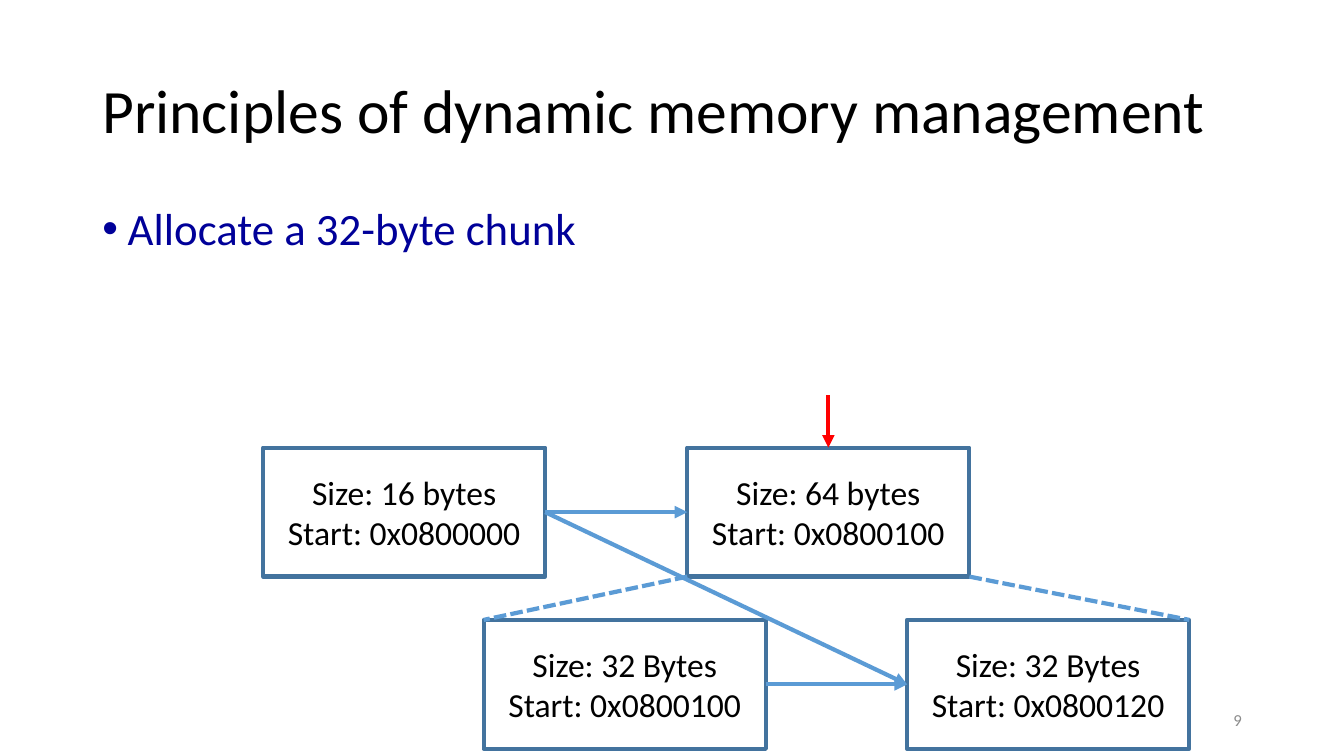
from lxml.etree import SubElement
from pptx import Presentation
from pptx.dml.color import RGBColor
from pptx.enum.dml import MSO_LINE_DASH_STYLE as Dash
from pptx.enum.shapes import MSO_CONNECTOR as Connector, MSO_SHAPE as Preset
from pptx.enum.text import MSO_ANCHOR as Anchor, PP_ALIGN as Align
from pptx.oxml.ns import qn
from pptx.util import Cm, Pt

BLACK = RGBColor(0x00, 0x00, 0x00)
NAVY = RGBColor(0x00, 0x00, 0x99)
GRAY = RGBColor(0x8C, 0x8C, 0x8C)
OUTLINE = RGBColor(0x43, 0x73, 0x9E)
BLUE = RGBColor(0x5B, 0x9B, 0xD5)
RED = RGBColor(0xFF, 0x00, 0x00)

TOP, LEFT, RIGHT = 0, 1, 3
CHUNK_WIDTH, CHUNK_HEIGHT = Cm(7.11), Cm(3.25)
UPPER_ROW, LOWER_ROW = Cm(11.28), Cm(15.62)


class MemorySlide:
    font = "Calibri"
    line_width = Pt(3)

    def __init__(self, slide):
        self.slide = slide

    def add_run(self, paragraph, text, size, color):
        run = paragraph.add_run()
        run.text = text
        run.font.name = self.font
        run.font.size = Pt(size)
        run.font.color.rgb = color

    def text(self, left, top, width, height, text, size, color, anchor=Anchor.MIDDLE, align=Align.LEFT):
        frame = self.slide.shapes.add_textbox(left, top, width, height).text_frame
        frame.word_wrap = True
        frame.vertical_anchor = anchor
        paragraph = frame.paragraphs[0]
        paragraph.alignment = align
        paragraph.line_spacing = 0.9
        self.add_run(paragraph, text, size, color)
        return paragraph

    def bullet(self, *args):
        paragraph = self.text(*args, anchor=Anchor.TOP)
        paragraph.space_before = Pt(10)
        properties = paragraph._p.get_or_add_pPr()
        properties.set("marL", str(Cm(0.64)))
        properties.set("indent", str(-Cm(0.64)))
        SubElement(properties, qn("a:buFont"), typeface="Arial")
        SubElement(properties, qn("a:buChar"), char="•")

    def chunk(self, left, top, size, start):
        shape = self.slide.shapes.add_shape(Preset.RECTANGLE, left, top, CHUNK_WIDTH, CHUNK_HEIGHT)
        shape.shadow.inherit = False
        shape.fill.background()
        shape.line.color.rgb = OUTLINE
        shape.line.width = self.line_width
        frame = shape.text_frame
        frame.word_wrap = True
        frame.vertical_anchor = Anchor.MIDDLE
        for index, text in enumerate((f"Size: {size}", f"Start: {start}")):
            paragraph = frame.add_paragraph() if index else frame.paragraphs[0]
            paragraph.alignment = Align.CENTER
            self.add_run(paragraph, text, 24, BLACK)
        return shape

    def line(self, start=(0, 0), end=(0, 0), color=BLUE):
        connector = self.slide.shapes.add_connector(Connector.STRAIGHT, *start, *end)
        connector.line.color.rgb = color
        connector.line.width = self.line_width
        SubElement(connector._element.spPr, qn("a:effectLst"))
        return connector

    def dashed(self, start, end):
        self.line(start, end).line.dash_style = Dash.SQUARE_DOT

    def arrow(self, target, side, source=None, start=(0, 0), color=BLUE):
        connector = self.line(start, color=color)
        if source is not None:
            connector.begin_connect(source, RIGHT)
        connector.end_connect(target, side)
        SubElement(connector.line._get_or_add_ln(), qn("a:tailEnd"), type="triangle")


def main():
    presentation = Presentation()
    presentation.slide_width, presentation.slide_height = Cm(33.87), Cm(19.05)
    page = MemorySlide(presentation.slides.add_slide(presentation.slide_layouts[6]))

    page.text(Cm(2.33), Cm(1.02), Cm(29.21), Cm(3.68),
              "Principles of dynamic memory management", 44, BLACK)
    page.bullet(Cm(2.33), Cm(5.08), Cm(29.21), Cm(3.05), "Allocate a 32-byte chunk", 32, NAVY)
    page.text(Cm(23.93), Cm(17.65), Cm(7.62), Cm(1.02), "9", 12, GRAY, align=Align.RIGHT)

    small = page.chunk(Cm(6.63), UPPER_ROW, "16 bytes", "0x0800000")
    large = page.chunk(Cm(17.32), UPPER_ROW, "64 bytes", "0x0800100")
    allocated = page.chunk(Cm(12.19), LOWER_ROW, "32 Bytes", "0x0800100")
    remaining = page.chunk(Cm(22.86), LOWER_ROW, "32 Bytes", "0x0800120")

    page.arrow(large, LEFT, small)
    page.arrow(large, TOP, start=(large.left + CHUNK_WIDTH // 2, Cm(9.96)), color=RED)
    page.arrow(remaining, LEFT, allocated)
    split = UPPER_ROW + CHUNK_HEIGHT
    page.dashed((large.left, split), (allocated.left, LOWER_ROW))
    page.dashed((large.left + CHUNK_WIDTH, split), (remaining.left + CHUNK_WIDTH, LOWER_ROW))
    page.arrow(remaining, LEFT, small)

    presentation.save("out.pptx")


if __name__ == "__main__":
    main()
